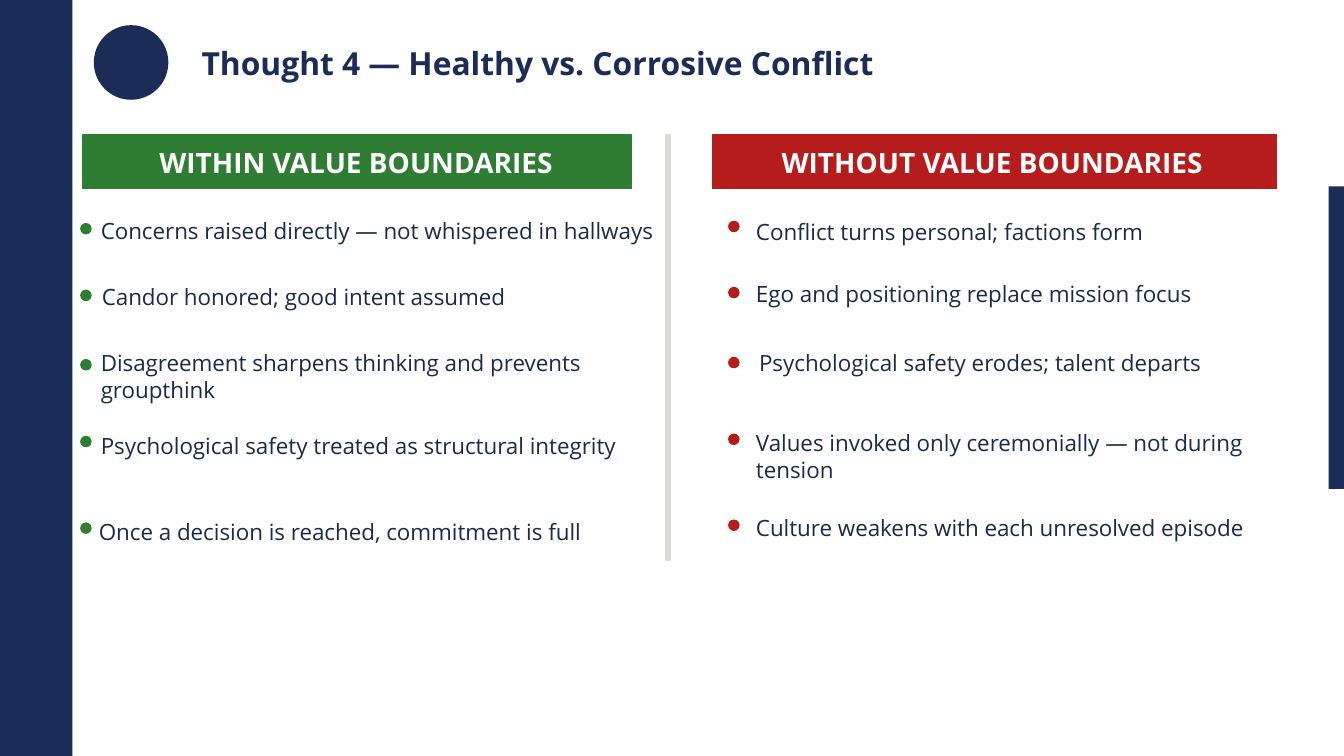
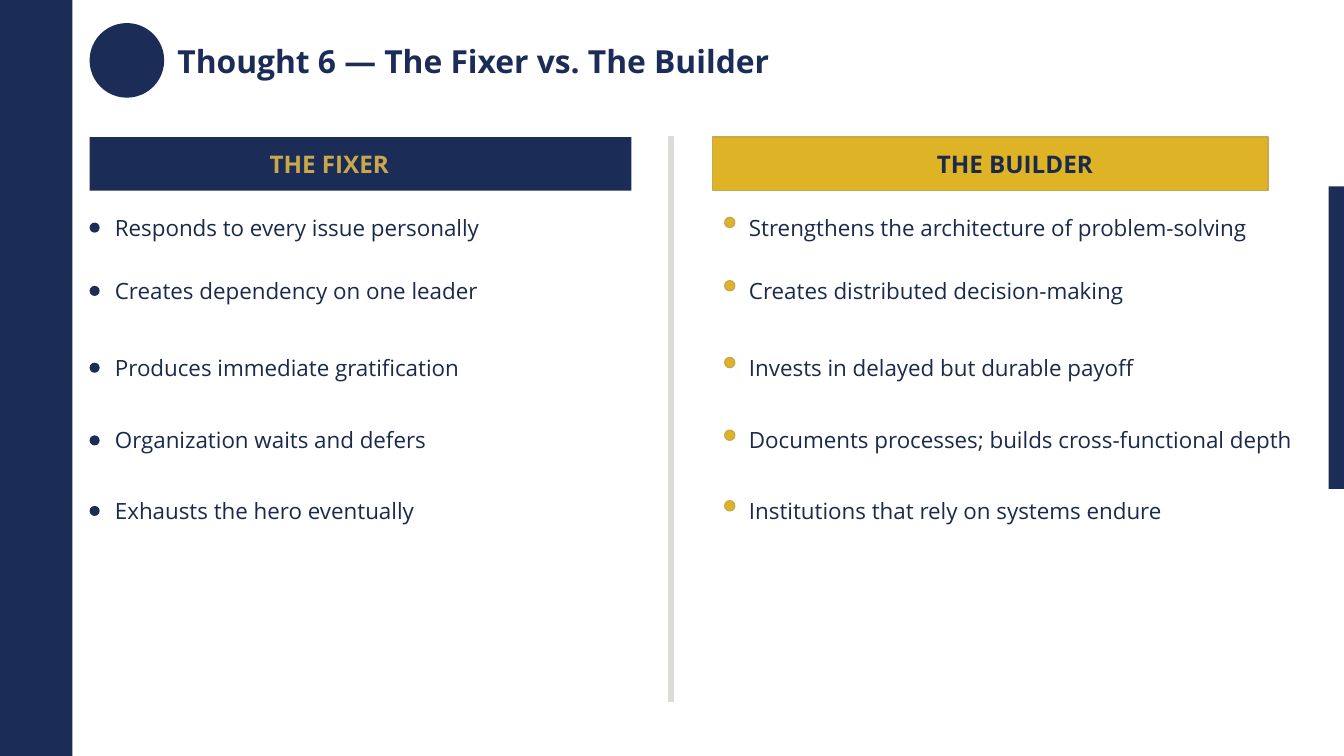
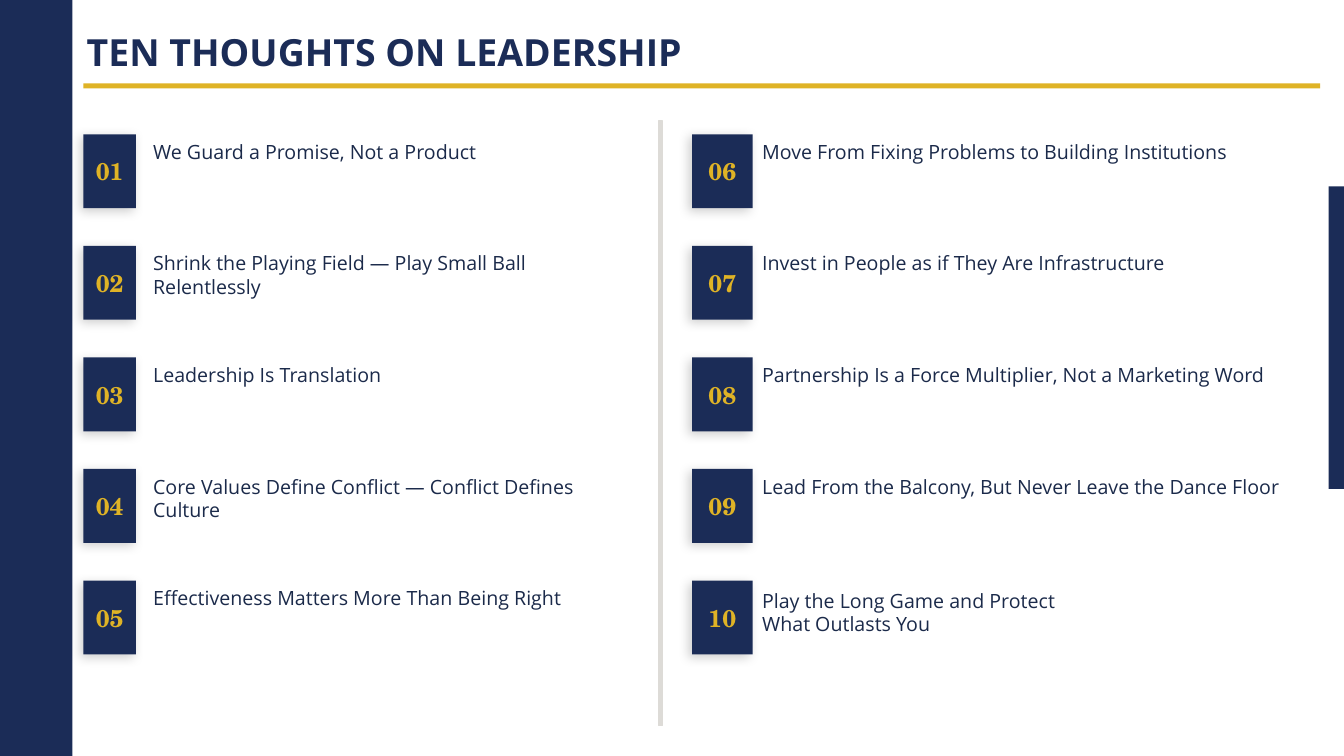
from dataclasses import dataclass

from lxml.etree import SubElement
from pptx import Presentation
from pptx.dml.color import RGBColor as RGB
from pptx.enum.shapes import MSO_SHAPE as SHAPE
from pptx.enum.text import MSO_ANCHOR as ANCHOR, PP_ALIGN as ALIGN
from pptx.oxml.ns import qn
from pptx.util import Pt


@dataclass(frozen=True)
class Theme:
    """Colours, fonts and type sizes of the deck."""
    navy: str = "1B2C57"
    ink: str = "1B2A4A"
    gold: str = "DFB326"
    dull_gold: str = "C9A84C"
    green: str = "2E7D32"
    red: str = "B71C1C"
    gray: str = "DDDBD7"
    white: str = "FFFFFF"
    sans: str = "Open Sans"
    serif: str = "TeX Gyre Schola"
    cover: float = 26.7
    title: float = 22.7
    heading: float = 20
    label: float = 17.3
    body: float = 16
    item: float = 14


T = Theme()


def put_text(sp, text, size=T.body, color=T.ink, font=T.sans, bold=False,
             align=ALIGN.LEFT, anchor=ANCHOR.TOP, shift=0):
    """Write text into a shape, moved sideways from its centre by shift."""
    tf = sp.text_frame
    tf.word_wrap = True
    tf.vertical_anchor = anchor
    tf.margin_top = tf.margin_bottom = 0
    tf.margin_left = Pt(max(0, 2 * shift))
    tf.margin_right = Pt(max(0, -2 * shift))
    p = tf.paragraphs[0]
    p.alignment = align
    r = p.add_run()
    r.text = text
    r.font.name = font
    r.font.size = Pt(size)
    r.font.bold = bold
    r.font.color.rgb = RGB.from_string(color)


def add_text(s, at, text, **fmt):
    """Add a text box at (left, top, width, height)."""
    put_text(s.shapes.add_textbox(*map(Pt, at)), text, **fmt)


def add_block(s, at, fill, line=None, kind=SHAPE.RECTANGLE):
    """Add a flat filled shape, outlined only when a line colour is given."""
    sp = s.shapes.add_shape(kind, *map(Pt, at))
    sp.shadow.inherit = False
    sp.fill.solid()
    sp.fill.fore_color.rgb = RGB.from_string(fill)
    if line:
        sp.line.color.rgb = RGB.from_string(line)
        sp.line.width = Pt(1)
    else:
        sp.line.fill.background()
    return sp


def add_shadow(sp):
    """Give a shape a soft black shadow."""
    effects = sp.element.spPr.find(qn("a:effectLst"))
    shadow = SubElement(effects, qn("a:outerShdw"), blurRad=str(Pt(8)),
                        dist=str(Pt(3)), dir=str(135 * 60000),
                        algn="bl", rotWithShape="0")
    black = SubElement(shadow, qn("a:srgbClr"), val="000000")
    SubElement(black, qn("a:alpha"), val="18000")


def add_title(s, at, text, size=T.title):
    """Add the slide title."""
    add_text(s, at, text, size=size, color=T.navy, bold=True,
             anchor=ANCHOR.MIDDLE)


def add_badge(s, left, top):
    """Add the round badge beside a title."""
    add_block(s, (left, top, 53.3, 53.3), T.navy, kind=SHAPE.OVAL)


def add_divider(s, left, top, width, height):
    """Add the gray bar between two columns."""
    add_block(s, (left, top, width, height), T.gray, T.gray)


def add_heading(s, at, text, fill, line=None, **fmt):
    """Add a coloured column heading."""
    put_text(add_block(s, at, fill, line), text, bold=True,
             align=ALIGN.CENTER, anchor=ANCHOR.MIDDLE, **fmt)


def add_points(s, dot_x, fill, line, rows):
    """Add rows of (text, dot top, text left, text top) with round markers."""
    for text, dot_y, x, y in rows:
        add_block(s, (dot_x, dot_y, 7.2, 7.2), fill, line, SHAPE.OVAL)
        add_text(s, (x, y, 403.2, 46), text)


def add_tiles(s, first, left, width, text_x, text_w, texts):
    """Add numbered tiles at equal steps with a text beside each."""
    for i, text in enumerate(texts):
        y = 95.9 + 79.7 * i
        tile = add_block(s, (left, y, width, 52.8), T.navy)
        add_shadow(tile)
        put_text(tile, f"{first + i:02}", size=T.label, color=T.gold,
                 font=T.serif, bold=True, align=ALIGN.CENTER,
                 anchor=ANCHOR.MIDDLE)
        last = first + i == 10
        add_text(s, (text_x, y + (5.8 if last else 3.9),
                     230 if last else text_w, 48), text, size=T.item)


def add_master_bands(prs, s):
    """Draw the side bands and move them to the slide master."""
    tree = prs.slide_master.element.cSld.spTree
    for i, at in enumerate([(0, 0, 51.8, 540), (949, 133.2, 11, 216)]):
        band = add_block(s, at, T.navy)
        band.element.nvSpPr.cNvPr.id = 101 + i
        tree.append(band.element)


def build_conflict(s):
    """Build the slide on healthy and corrosive conflict."""
    add_title(s, (144, 10, 787, 69), "Thought 4 — Healthy vs. Corrosive Conflict")
    add_badge(s, 67, 18)
    add_heading(s, (59, 96.5, 392, 38.2), "WITHIN VALUE BOUNDARIES", T.green,
                T.green, size=T.heading, color=T.white, shift=-0.7)
    add_heading(s, (509, 96.5, 403, 38.2), "WITHOUT VALUE BOUNDARIES", T.red,
                T.red, size=T.heading, color=T.white, shift=-1.8)
    add_divider(s, 475.2, 96.5, 3.6, 303.8)
    add_points(s, 57.8, T.green, T.green, [
        ("Concerns raised directly — not whispered in hallways", 159.8, 72, 154.8),
        ("Candor honored; good intent assumed", 207.4, 72.7, 202.3),
        ("Disagreement sharpens thinking and prevents groupthink", 257, 72, 249.1),
        ("Psychological safety treated as structural integrity", 311.8, 72, 308.9),
        ("Once a decision is reached, commitment is full", 373.7, 70.6, 370.1),
    ])
    add_points(s, 520.6, T.red, T.red, [
        ("Conflict turns personal; factions form", 158.2, 540, 156),
        ("Ego and positioning replace mission focus", 205.4, 540, 200.2),
        ("Psychological safety erodes; talent departs", 255.4, 542.2, 249.1),
        ("Values invoked only ceremonially — not during tension", 310.2, 540, 306.7),
        ("Culture weakens with each unresolved episode", 371.6, 540, 367.2),
    ])


def build_fixer(s):
    """Build the slide on the fixer and the builder."""
    add_title(s, (126.7, 9, 826, 69), "Thought 6 — The Fixer vs. The Builder")
    add_badge(s, 64, 16.5)
    add_heading(s, (64, 98, 387, 38.2), "THE FIXER", T.navy,
                size=T.label, color=T.dull_gold, shift=-22.3)
    add_heading(s, (509, 98, 396.7, 38.2), "THE BUILDER", T.gold, T.dull_gold,
                size=T.label, shift=17.6)
    add_divider(s, 477.4, 98, 3.6, 403)
    tops = (152.6, 197.8, 252.7, 304.6, 355)
    fixer = ("Responds to every issue personally",
             "Creates dependency on one leader",
             "Produces immediate gratification",
             "Organization waits and defers",
             "Exhausts the hero eventually")
    builder = ("Strengthens the architecture of problem-solving",
               "Creates distributed decision-making",
               "Invests in delayed but durable payoff",
               "Documents processes; builds cross-functional depth",
               "Institutions that rely on systems endure")
    add_points(s, 64, T.navy, None,
               [(text, y + 6.4, 82.1, y) for text, y in zip(fixer, tops)])
    add_points(s, 517.7, T.gold, T.dull_gold,
               [(text, y + 2.7, 535, y) for text, y in zip(builder, tops)])


def build_thoughts(s):
    """Build the overview of the ten thoughts."""
    add_title(s, (61.9, -0.7, 865, 75), "TEN THOUGHTS ON LEADERSHIP", T.cover)
    add_block(s, (59.6, 59.6, 883.4, 3.6), T.gold)
    add_divider(s, 470.4, 86.4, 2.7, 432)
    add_tiles(s, 1, 59.6, 37.6, 109.4, 343.4, (
        "We Guard a Promise, Not a Product",
        "Shrink the Playing Field — Play Small Ball Relentlessly",
        "Leadership Is Translation",
        "Core Values Define Conflict — Conflict Defines Culture",
        "Effectiveness Matters More Than Being Right",
    ))
    add_tiles(s, 6, 494.4, 43.2, 544.4, 393.8, (
        "Move From Fixing Problems to Building Institutions",
        "Invest in People as if They Are Infrastructure",
        "Partnership Is a Force Multiplier, Not a Marketing Word",
        "Lead From the Balcony, But Never Leave the Dance Floor",
        "Play the Long Game and Protect What Outlasts You",
    ))


def main():
    """Build the deck and save it."""
    prs = Presentation()
    prs.slide_width, prs.slide_height = Pt(960), Pt(540)
    blank = prs.slide_layouts[6]
    slides = [prs.slides.add_slide(blank) for _ in range(3)]
    add_master_bands(prs, slides[0])
    for build, s in zip((build_conflict, build_fixer, build_thoughts), slides):
        build(s)
    prs.save("out.pptx")


if __name__ == "__main__":
    main()
